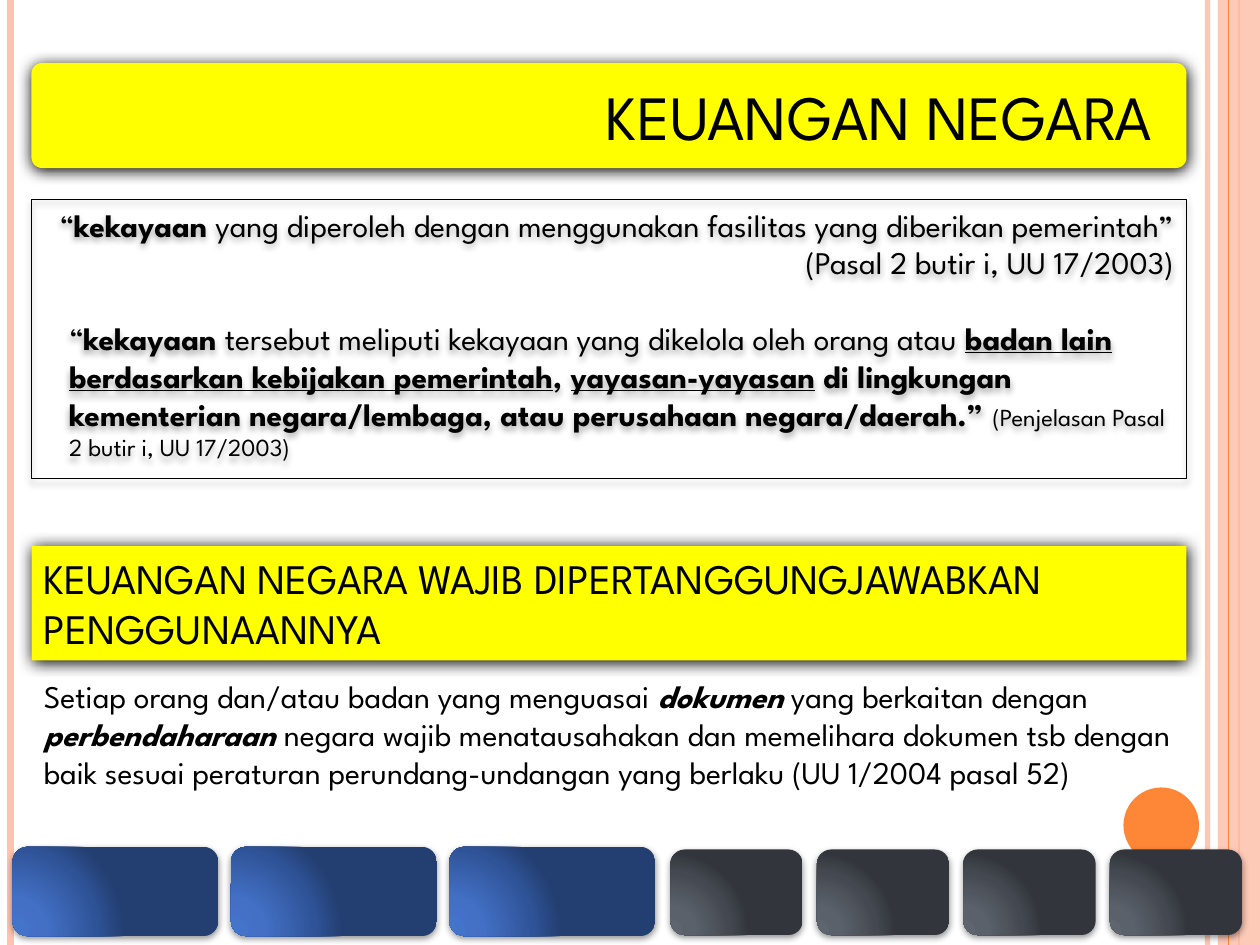
from lxml import etree
from pptx import Presentation
from pptx.dml.color import RGBColor
from pptx.enum.shapes import MSO_CONNECTOR, MSO_SHAPE
from pptx.enum.text import MSO_ANCHOR, PP_ALIGN
from pptx.oxml import parse_xml
from pptx.oxml.ns import qn
from pptx.util import Inches, Pt

RECT, ROUND, OVAL = MSO_SHAPE.RECTANGLE, MSO_SHAPE.ROUNDED_RECTANGLE, MSO_SHAPE.OVAL
STRAIGHT = MSO_CONNECTOR.STRAIGHT
TOP, MIDDLE = MSO_ANCHOR.TOP, MSO_ANCHOR.MIDDLE
LEFT, RIGHT = PP_ALIGN.LEFT, PP_ALIGN.RIGHT
COLS, ROWS = 120, 90
BLACK, YELLOW, ORANGE, PEACH = "000000", "FFFF00", "FE8637", "FEC3AE"
BLUES = ["4574CC", "4370C5", "2F5397", "233E70"]
GREYS = ["5E656F", "5B616B", "444951", "32363C"]
STOPS = [0, 30, 75, 100]
BANNER_SHADOW = (100, 8.5, 1)
BUTTON_SHADOW = (42, 4, 1.6)
QUOTE_SHADOW = (32, 3.5, 2.2)
NS = 'xmlns:a="http://schemas.openxmlformats.org/drawingml/2006/main"'


def rgb(color):
    """Turn a hex string into a colour."""
    return RGBColor.from_string(color)


class Deck:
    """Holds the style and the current slide; lengths are grid columns and rows."""

    def __init__(self, font="League Spartan"):
        self.font = font
        self.prs = Presentation()
        self.prs.slide_width, self.prs.slide_height = Inches(10), Inches(7.5)
        self.s = self.prs.slides.add_slide(self.prs.slide_layouts[6])

    def box(self, x, y, w, h):
        """Convert grid units to slide lengths."""
        cw, rh = self.prs.slide_width / COLS, self.prs.slide_height / ROWS
        return int(x * cw), int(y * rh), int(w * cw), int(h * rh)

    def fade(self, sp, alpha):
        """Make the first colour of a shape partly transparent."""
        clr = sp._element.spPr.find(".//" + qn("a:srgbClr"))
        etree.SubElement(clr, qn("a:alpha"), val=str(alpha * 1000))

    def rule(self, col, width, color, alpha=None):
        """Draw a vertical line over the full height."""
        x, y, _, h = self.box(col, 0, 0, ROWS)
        sp = self.s.shapes.add_connector(STRAIGHT, x, y, x, h)
        sp.line.color.rgb, sp.line.width = rgb(color), Pt(width)
        if alpha:
            self.fade(sp, alpha)
        etree.SubElement(sp._element.spPr, qn("a:effectLst"))

    def shape(self, kind, at, fill=None, line=None, shadow=None, alpha=None):
        """Draw a preset shape with a flat fill or none."""
        sp = self.s.shapes.add_shape(kind, *self.box(*at))
        sp.shadow.inherit = False
        if fill:
            sp.fill.solid()
            sp.fill.fore_color.rgb = rgb(fill)
        else:
            sp.fill.background()
        if alpha:
            self.fade(sp, alpha)
        if line:
            sp.line.color.rgb, sp.line.width = rgb(line), Pt(0.75)
        else:
            sp.line.fill.background()
        if shadow:
            self.shade(sp, *shadow)
        return sp

    def shade(self, sp, alpha, blur, dist):
        """Add a black shadow falling straight down."""
        sp._element.spPr.find(qn("a:effectLst")).append(parse_xml(
            f'<a:outerShdw {NS} blurRad="{Pt(blur)}" dist="{Pt(dist)}" dir="5400000" '
            f'rotWithShape="0"><a:srgbClr val="{BLACK}"><a:alpha val="{alpha * 1000}"/>'
            '</a:srgbClr></a:outerShdw>'))

    def button(self, at, colors):
        """Draw a rounded button with a circular gradient."""
        sp = self.shape(ROUND, at, colors[0], shadow=BUTTON_SHADOW)
        stops = "".join(f'<a:gs pos="{p * 1000}"><a:srgbClr val="{c}"/></a:gs>'
                        for p, c in zip(STOPS, colors))
        spPr = sp._element.spPr
        spPr.replace(spPr.find(qn("a:solidFill")), parse_xml(
            f'<a:gradFill {NS} rotWithShape="1"><a:gsLst>{stops}</a:gsLst><a:path path="circle">'
            '<a:fillToRect l="5000" t="100000" r="120000" b="10000"/></a:path></a:gradFill>'))

    def textbox(self, at):
        """Add an empty text box."""
        return self.s.shapes.add_textbox(*self.box(*at))

    def add_text(self, sp, paras, size, anchor=TOP, right=0.1):
        """Fill a shape with paragraphs given as (align, indent, space before, runs)."""
        tf = sp.text_frame
        tf.word_wrap, tf.vertical_anchor, tf.margin_right = True, anchor, Inches(right)
        for i, (align, indent, before, runs) in enumerate(paras):
            p = tf.paragraphs[0] if i == 0 else tf.add_paragraph()
            p.alignment, p.space_before = align, Pt(before)
            p._p.get_or_add_pPr().set("marL", str(Inches(indent)))
            for text, marks, *own in runs:
                r = p.add_run()
                r.text = text
                f = r.font
                f.name, f.size = self.font, Pt(own[0] if own else size)
                f.color.rgb = rgb(BLACK)
                f.bold, f.italic, f.underline = ("b" in marks, "i" in marks, "u" in marks)


def main():
    """Build the slide."""
    d = Deck()
    d.rule(115, 3, PEACH, 93)
    d.rule(1, 4.5, PEACH)
    d.rule(118, 1.5, ORANGE)
    d.shape(RECT, (116, 0, 4, ROWS), PEACH, alpha=87)
    d.rule(117, 0.75, ORANGE)
    d.shape(OVAL, (107, 75, 7.2, 7.2), ORANGE)

    for i in range(3):
        d.button((1.2 + 20.8 * i, 80.65, 19.6, 8.5), BLUES)
    for i in range(4):
        d.button((63.85 + 13.95 * i, 80.9, 12.6, 8.15), GREYS)

    banner = d.shape(ROUND, (3, 6, 110, 10), YELLOW, shadow=BANNER_SHADOW)
    banner.adjustments[0] = 0.1
    title = d.textbox((3.25, 6.25, 109.5, 9.4))
    d.add_text(title, [(RIGHT, 0, 0, [("KEUANGAN NEGARA", "")])], 36, MIDDLE, 0.25)

    quote = d.shape(RECT, (3, 19, 110, 26.6), line=BLACK, shadow=QUOTE_SHADOW)
    d.add_text(quote, [
        (RIGHT, 0, 0, [
            ("“", ""), ("kekayaan ", "b"),
            ("yang diperoleh dengan menggunakan fasilitas yang diberikan pemerintah” "
             "(Pasal 2 butir i, UU 17/2003)", "")]),
        (LEFT, 0.2, 21.6, [
            ("“", ""), ("kekayaan ", "b"),
            ("tersebut meliputi kekayaan yang dikelola oleh orang atau ", ""),
            ("badan lain berdasarkan kebijakan pemerintah", "bu"), (", ", "b"),
            ("yayasan-yayasan", "bu"),
            (" di lingkungan kementerian negara/lembaga, atau perusahaan negara/daerah.” ", "b"),
            ("(Penjelasan Pasal 2 butir i, UU 17/2003)", "", 14)])], 18)

    duty = d.textbox((3, 63.9, 110, 16.2))
    d.add_text(duty, [(LEFT, 0, 0, [
        ("Setiap orang dan/atau badan yang menguasai ", ""), ("dokumen", "bi"),
        (" yang berkaitan dengan ", ""), ("perbendaharaan ", "bi"),
        ("negara wajib menatausahakan dan memelihara dokumen tsb dengan baik sesuai "
         "peraturan perundang-undangan yang berlaku (UU 1/2004 pasal 52)", "")])], 18)

    heading = d.shape(RECT, (3, 52, 110, 10.9), YELLOW, shadow=BANNER_SHADOW)
    d.add_text(heading, [(LEFT, 0, 0, [
        ("KEUANGAN NEGARA WAJIB DIPERTANGGUNGJAWABKAN PENGGUNAANNYA", "")])], 24)
    d.prs.save("out.pptx")


if __name__ == "__main__":
    main()
